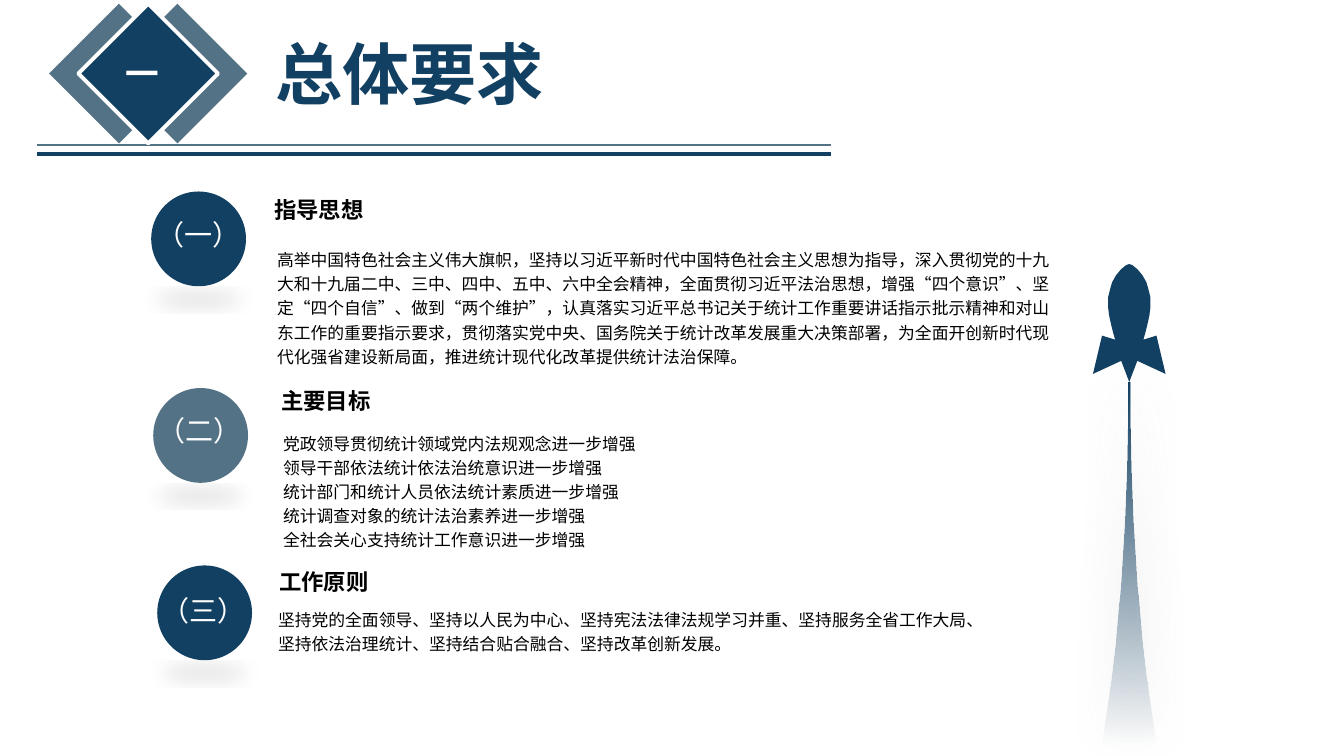
"""Build the slide on overall requirements: three numbered sections beside a rising rocket."""
import lxml.etree
import pptx
import pptx.dml.color
import pptx.enum.shapes
import pptx.enum.text
import pptx.oxml.ns
import pptx.util

PX = 9144
FONT = "Noto Sans CJK SC"
NAVY, SLATE, BLACK, WHITE = "124062", "537285", "000000", "FFFFFF"
SHAPES = pptx.enum.shapes.MSO_SHAPE
qn = pptx.oxml.ns.qn


def paint(fill, color):
    fill.solid()
    fill.fore_color.rgb = pptx.dml.color.RGBColor.from_string(color)


def write(box, text, size, color=BLACK, bold=False, wrap=False, spacing=None):
    area = slide.shapes.add_textbox(*[side * PX for side in box])
    frame = area.text_frame
    frame.text = text
    frame.word_wrap = wrap
    frame.auto_size = pptx.enum.text.MSO_AUTO_SIZE.SHAPE_TO_FIT_TEXT
    for paragraph in frame.paragraphs:
        paragraph.line_spacing = spacing
        for run in paragraph.runs:
            run.font.size = pptx.util.Pt(size)
            run.font.bold = bold
            run.font.name = FONT
            paint(run.font.fill, color)
            east_asian = lxml.etree.SubElement(run._r.get_or_add_rPr(), qn("a:ea"))
            east_asian.set("typeface", FONT)


deck = pptx.Presentation()
deck.slide_width, deck.slide_height = 1333 * PX, 750 * PX
slide = deck.slides.add_slide(deck.slide_layouts[6])

for y, color, weight in [(144, SLATE, 1), (153, NAVY, 3)]:
    rule = slide.shapes.add_connector(
        pptx.enum.shapes.MSO_CONNECTOR.STRAIGHT, 37 * PX, y * PX, 824 * PX, y * PX)
    paint(rule.line.fill, color)
    rule.line.width = pptx.util.Pt(weight)
    lxml.etree.SubElement(rule._element.spPr, qn("a:effectLst"))

for x, color in [(127, SLATE), (69, SLATE), (98, NAVY)]:
    diamond = slide.shapes.add_shape(SHAPES.ROUNDED_RECTANGLE, x * PX, 24 * PX, 98 * PX, 98 * PX)
    diamond.adjustments[0] = 0
    diamond.rotation = 45
    diamond.shadow.inherit = False
    paint(diamond.fill, color)
    diamond.line.fill.background()
    if color == NAVY:
        paint(diamond.line.fill, WHITE)
        diamond.line.width = pptx.util.Pt(2.75)

write((115, 48, 54, 50), "一", 24, WHITE, bold=True)
write((263, 27, 289, 91), "总体要求", 48, NAVY, bold=True)

guidance = (
    "高举中国特色社会主义伟大旗帜，坚持以习近平新时代中国特色社会主义思想为指导，"
    "深入贯彻党的十九大和十九届二中、三中、四中、五中、六中全会精神，"
    "全面贯彻习近平法治思想，增强“四个意识”、坚定“四个自信”、做到“两个维护”，"
    "认真落实习近平总书记关于统计工作重要讲话指示批示精神和对山东工作的重要指示要求，"
    "贯彻落实党中央、国务院关于统计改革发展重大决策部署，"
    "为全面开创新时代现代化强省建设新局面，推进统计现代化改革提供统计法治保障。")
goals = "\n".join([
    "党政领导贯彻统计领域党内法规观念进一步增强",
    "领导干部依法统计依法治统意识进一步增强",
    "统计部门和统计人员依法统计素质进一步增强",
    "统计调查对象的统计法治素养进一步增强",
    "全社会关心支持统计工作意识进一步增强"])
principles = (
    "坚持党的全面领导、坚持以人民为中心、坚持宪法法律法规学习并重、坚持服务全省工作大局、"
    "坚持依法治理统计、坚持结合贴合融合、坚持改革创新发展。")

sections = [
    ("（一）", (150, 190), NAVY, (145, 211), "指导思想", (262, 190), guidance, (265, 239, 798, 156)),
    ("（二）", (152, 385), SLATE, (146, 405), "主要目标", (269, 379), goals, (271, 421, 773, 131)),
    ("（三）", (156, 561), NAVY, (150, 584), "工作原则", (267, 559), principles, (266, 596, 717, 59)),
]
shadows = []
for number, (x, y), color, number_at, heading, heading_at, body, body_box in sections:
    badge = slide.shapes.add_shape(SHAPES.OVAL, x * PX, y * PX, 94 * PX, 94 * PX)
    paint(badge.fill, color)
    badge.line.fill.background()
    shadows.append((badge, BLACK, 10, 14, 3, 90, {"sx": "90000", "sy": "-19000", "algn": "b"}))
    write((*number_at, 104, 44), number, 20, WHITE)
    write((*heading_at, 110, 37), heading, 16, bold=True)
    write(body_box, body, 12, wrap=True, spacing=1.2)

AXIS = 1120
rocket_half = [
    (0, 262), (3, 263), (8, 267), (13, 273), (17, 280), (19, 287), (21, 295), (21, 305),
    (20, 313), (18, 322), (16, 330), (14, 337), (27, 333), (36, 371), (8, 358), (0, 379)]
flame_half = [
    (1, 379), (1, 417), (2, 465), (4, 516), (8, 580), (13, 638), (19, 688), (25, 728), (27, 741)]
silhouettes = []
for half in (rocket_half, flame_half):
    outline = [(AXIS + dx, y) for dx, y in half] + [(AXIS - dx, y) for dx, y in reversed(half)]
    builder = slide.shapes.build_freeform(*outline[0], scale=PX)
    builder.add_line_segments(outline[1:], close=True)
    silhouette = builder.convert_to_shape()
    silhouette.shadow.inherit = False
    silhouette.line.fill.background()
    silhouettes.append(silhouette)
rocket, flame = silhouettes
paint(rocket.fill, NAVY)

flame.fill.gradient()
flame.fill.gradient_angle = 90
for stop, position in zip(flame.fill.gradient_stops, (0, 1)):
    stop.color.rgb = pptx.dml.color.RGBColor.from_string(NAVY)
    stop.position = position
clear_end = flame._element.spPr.find(".//" + qn("a:srgbClr"))
lxml.etree.SubElement(clear_end, qn("a:alpha")).set("val", "0")
shadows.append((flame, "808080", 40, 33, 2, 45, {}))

for caster, color, opacity, blur, distance, angle, stretch in shadows:
    caster.shadow.inherit = False
    effects = caster._element.spPr.find(qn("a:effectLst"))
    shade = lxml.etree.SubElement(
        effects, qn("a:outerShdw"), blurRad=str(blur * 12700), dist=str(distance * 12700),
        dir=str(angle * 60000), **stretch, rotWithShape="0")
    tint = lxml.etree.SubElement(shade, qn("a:srgbClr"), val=color)
    lxml.etree.SubElement(tint, qn("a:alpha"), val=str(opacity * 1000))

deck.save("out.pptx")
